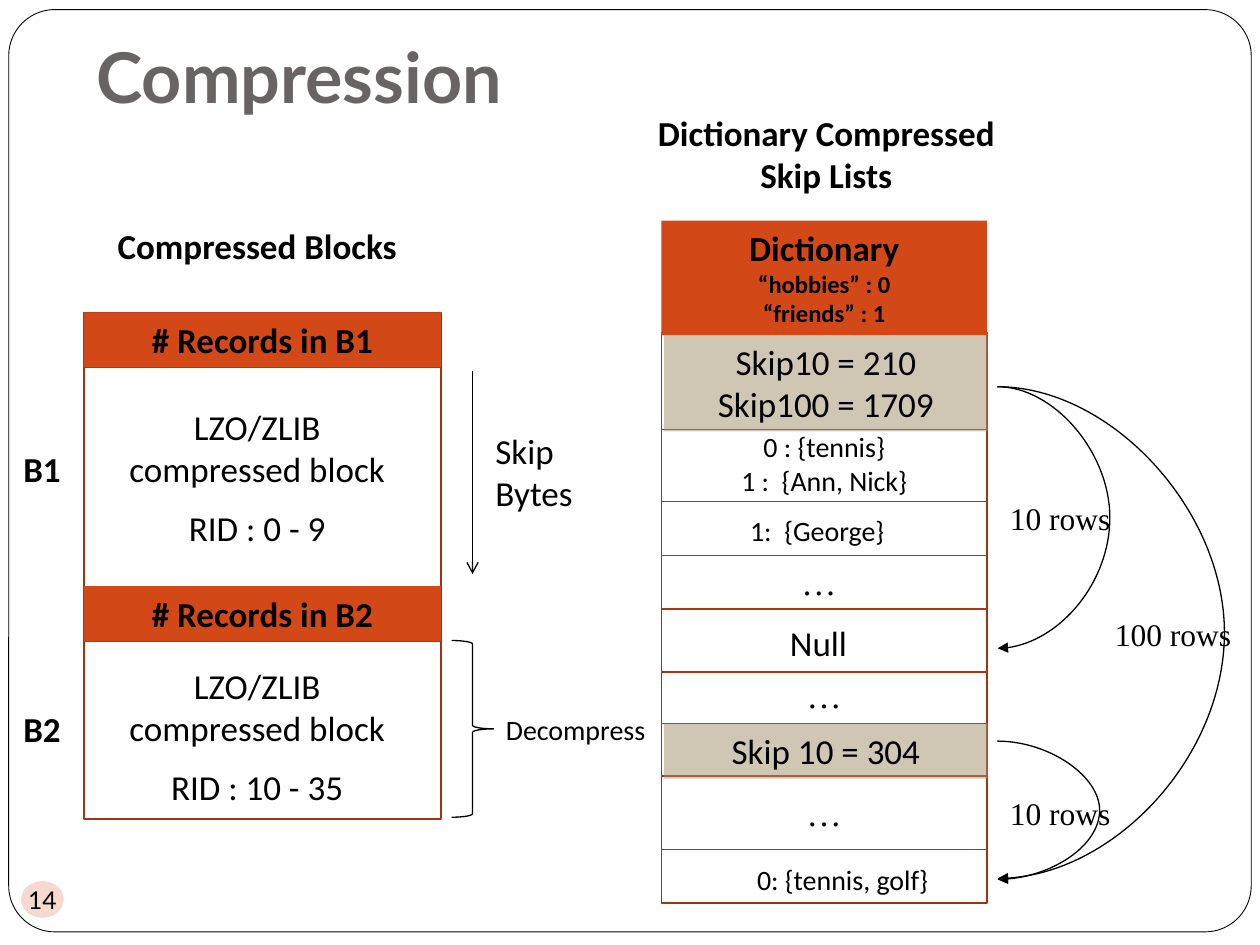
import pptx
import pptx.util
import pptx.dml.color
import pptx.enum.shapes
import pptx.enum.text
import pptx.oxml
import pptx.oxml.ns
from pptx.util import Pt

COLORS = {"black": "000000", "white": "FFFFFF", "title": "696464", "orange": "D34817",
          "tan": "A28E6A", "border": "9C3511", "rule": "B1360B"}
SHAPE = pptx.enum.shapes.MSO_SHAPE
CONNECTOR = pptx.enum.shapes.MSO_CONNECTOR
ANCHOR = pptx.enum.text.MSO_ANCHOR
LEFT, CENTER = pptx.enum.text.PP_ALIGN.LEFT, pptx.enum.text.PP_ALIGN.CENTER
CURVE_WIDTH = 0.12


def rgb(name):
    return pptx.dml.color.RGBColor.from_string(COLORS[name])


def add_xml(parent, tag, **attrs):
    el = pptx.oxml.parse_xml(f"<a:{tag} {pptx.oxml.ns.nsdecls('a')}/>")
    for key, value in attrs.items():
        el.set(key, value)
    parent.append(el)


def write(sp, lines, size=20, font="Calibri", color="black", bold=False, align=CENTER,
          anchor=ANCHOR.TOP, wrap=True, gap=0, small=None):
    tf = sp.text_frame
    tf.word_wrap = wrap
    tf.vertical_anchor = anchor
    for i, line in enumerate(lines):
        p = tf.paragraphs[0] if i == 0 else tf.add_paragraph()
        p.text = line
        p.alignment = align
        p.font.size = Pt(small if small and i else size)
        p.font.name = font
        p.font.bold = bold
        p.font.color.rgb = rgb(color)
        if gap and i:
            p.space_before = Pt(gap)


def add_text(s, x, y, w, h, *lines, **style):
    sp = s.shapes.add_textbox(Pt(x), Pt(y), Pt(w), Pt(h))
    write(sp, lines, **style)
    return sp


def add_box(s, kind, x, y, w, h, fill=None, line=None, weight=1, alpha=None):
    sp = s.shapes.add_shape(kind, Pt(x), Pt(y), Pt(w), Pt(h))
    sp.shadow.inherit = False
    if fill:
        sp.fill.solid()
        sp.fill.fore_color.rgb = rgb(fill)
        if alpha:
            color = sp._element.spPr.find(".//" + pptx.oxml.ns.qn("a:srgbClr"))
            add_xml(color, "alpha", val=str(alpha * 1000))
    else:
        sp.fill.background()
    if line:
        sp.line.color.rgb = rgb(line)
        sp.line.width = Pt(weight)
    else:
        sp.line.fill.background()
    return sp


def add_line(s, x1, y1, x2, y2, color="black", tail=None, kind=CONNECTOR.STRAIGHT):
    c = s.shapes.add_connector(kind, Pt(x1), Pt(y1), Pt(x2), Pt(y2))
    c.line.color.rgb = rgb(color)
    c.line.width = Pt(0.75)
    if tail:
        add_xml(c.line._get_or_add_ln(), "tailEnd", type=tail)
    add_xml(c._element.spPr, "effectLst")
    return c


def add_arc(s, x, y1, y2, bulge):
    c = add_line(s, x, y1, x + CURVE_WIDTH, y2, tail="triangle", kind=CONNECTOR.CURVE)
    guides = c._element.spPr.find(".//" + pptx.oxml.ns.qn("a:avLst"))
    add_xml(guides, "gd", name="adj1", fmla=f"val {round(bulge / CURVE_WIDTH * 100000)}")


def draw_frame(s, x, y, w, h):
    sp = add_box(s, SHAPE.ROUNDED_RECTANGLE, x, y, w, h, "white", "black", 0.5)
    sp.adjustments[0] = 0.05
    sp = add_text(s, x + 43, y + 6.5, 612, 62.5, "Compression", size=40, font="Lato",
                  color="title", bold=True, align=LEFT, anchor=ANCHOR.BOTTOM)
    sp.text_frame.margin_bottom = Pt(7.2)
    badge = add_box(s, SHAPE.OVAL, x + 7, y + 498, 24.5, 21, "orange", alpha=20)
    tf = badge.text_frame
    tf.margin_left = tf.margin_right = tf.margin_top = tf.margin_bottom = 0
    write(badge, ["14"], size=14, font="Lato", anchor=ANCHOR.MIDDLE, wrap=False)


def draw_blocks(s, x, y, w, h):
    add_text(s, x + 12, y - 54, 174, 31.5, "Compressed Blocks", bold=True)
    add_box(s, SHAPE.RECTANGLE, x, y, w, h, line="border")
    for name, rids, top, body, label in (("B1", "0 - 9", 0, 49.5, 73.5),
                                         ("B2", "10 - 35", 156.5, 197.5, 222)):
        sp = add_box(s, SHAPE.RECTANGLE, x, y + top, w, 31.5, "orange")
        write(sp, [f"# Records in {name}"], bold=True)
        add_line(s, x, y + top + 31.5, x + w, y + top + 31.5, "rule")
        add_text(s, x + 18, y + body, 162, 92, "LZO/ZLIB compressed block",
                 f"RID : {rids}", gap=10)
        add_text(s, x - 42, y + label, 36, 31.5, name, bold=True)


def draw_block_notes(s, x, y):
    add_line(s, x + 12, y, x + 12, y + 116, tail="arrow")
    add_text(s, x + 18, y + 30, 66, 55.5, "Skip Bytes", align=LEFT)
    add_box(s, SHAPE.RIGHT_BRACE, x, y + 154, 24, 101, line="black", weight=0.75)
    add_text(s, x + 24, y + 191.5, 96, 26.5, "Decompress", size=16, align=LEFT)


def draw_dictionary(s, x, y, w, h):
    add_text(s, x - 27.5, y - 66, 243.5, 55.5, "Dictionary Compressed Skip Lists", bold=True)
    add_box(s, SHAPE.RECTANGLE, x, y + 64, w, h - 64, line="border")
    for row in (119.5, 160.5, 191.5, 222, 258, 287.5, 317.5, 359.5):
        add_line(s, x, y + row, x + w, y + row, "rule")
    for top, height, lines in ((65, 55.5, ["Skip10 = 210", "Skip100 = 1709"]),
                               (287.5, 31.5, ["Skip 10 = 304"])):
        sp = add_box(s, SHAPE.RECTANGLE, x + 1.5, y + top, w - 1, height, "tan", alpha=50)
        write(sp, lines)
    sp = add_box(s, SHAPE.RECTANGLE, x, y, w, 65.5, "orange")
    write(sp, ["Dictionary", "“hobbies” : 0", "“friends” : 1"], bold=True, small=14)
    add_text(s, x + 24, y + 116, 138, 46, "0 : {tennis}", "1 :  {Ann, Nick}", size=16)
    add_text(s, x + 43, y + 164, 92, 26.5, "1:  {George}", size=16, wrap=False)
    add_text(s, x + 66, y + 225.5, 47.5, 31.5, "Null", wrap=False)
    add_text(s, x + 47, y + 363.5, 113, 26.5, "0: {tennis, golf}", size=16, wrap=False)
    for left, top in ((33, 191), (36, 255.5), (36, 322.5)):
        add_text(s, x + left, y + top, 114, 31.5, "…", font="Times New Roman")


def draw_skips(s, x, y):
    for top, bottom, bulge in ((0, 281, 137.3), (0, 149.5, 68), (202.5, 281.5, 61.8)):
        add_arc(s, x, y + top, y + bottom, bulge)
    for left, top, w, label in ((0, 60.5, 72, "10 rows"), (0, 229, 72, "10 rows"),
                                (60, 127, 83.5, "100 rows")):
        add_text(s, x + left, y + top, w, 29, label, size=18,
                 font="Times New Roman", align=LEFT)


def main():
    prs = pptx.Presentation()
    prs.slide_width, prs.slide_height = Pt(720), Pt(540)
    s = prs.slides.add_slide(prs.slide_layouts[6])
    draw_frame(s, 5, 5.5, 710, 527)
    draw_blocks(s, 48, 178.5, 204, 289.5)
    draw_block_notes(s, 258, 212)
    draw_dictionary(s, 378, 126, 186, 390)
    draw_skips(s, 570, 221)
    prs.save("out.pptx")


if __name__ == "__main__":
    main()
